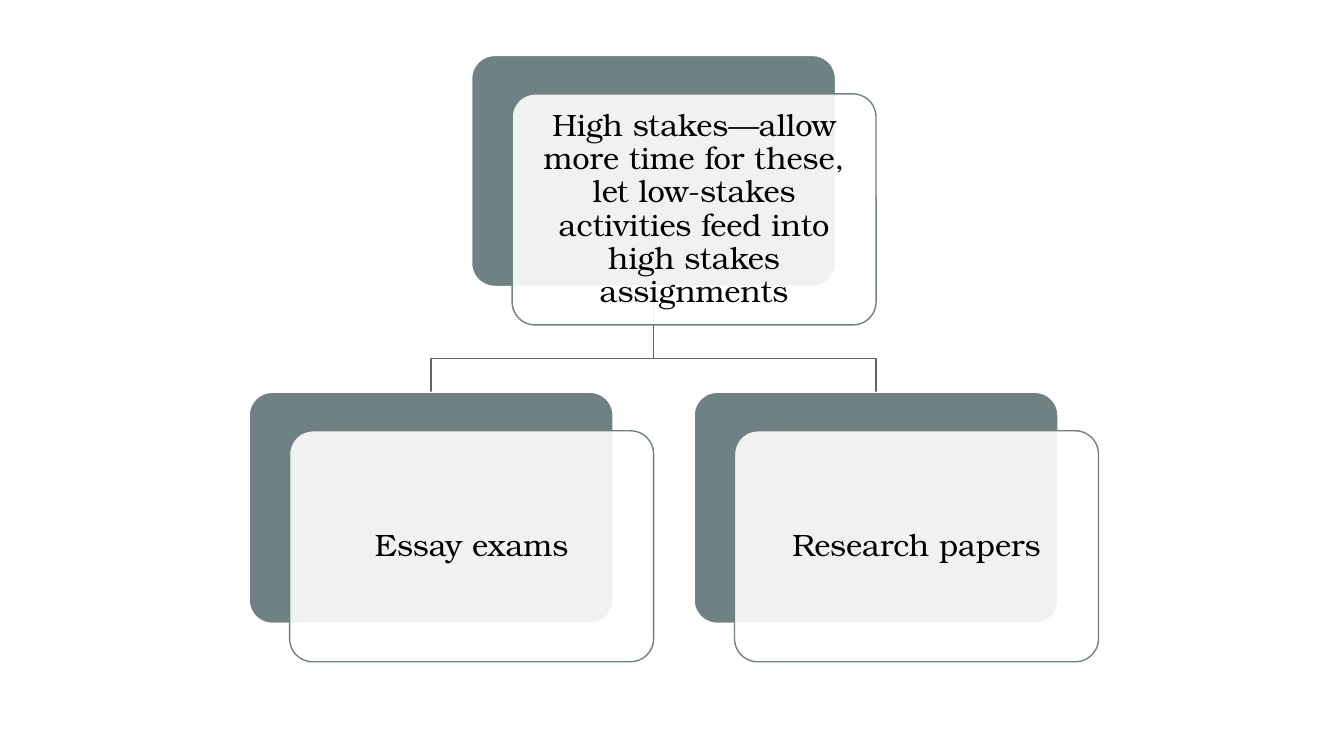
import pptx
import pptx.util
from lxml import etree
from pptx.dml.color import RGBColor
from pptx.enum.shapes import MSO_SHAPE
from pptx.enum.text import MSO_ANCHOR, PP_ALIGN
from pptx.oxml.ns import qn

Pt = pptx.util.Pt

ROOT = "High stakes—allow more time for these, let low-stakes activities feed into high stakes assignments"
CHILDREN = ["Essay exams", "Research papers"]

FONT = "TeX Gyre Bonum"
SLATE = RGBColor(0x6F, 0x81, 0x83)
BRANCH = RGBColor(0x59, 0x67, 0x69)
WHITE = RGBColor(0xFF, 0xFF, 0xFF)
BLACK = RGBColor(0x00, 0x00, 0x00)

# All lengths in points
CARD_WIDTH, CARD_HEIGHT = 260, 165
SHIFT_X, SHIFT_Y = 28.9, 27.5
CHILD_LEFT, CHILD_STEP = 178, 317.8
ROOT_TOP, CHILD_TOP = 39.6, 280.2
ELBOW_Y = 256.3
INSET = 6.6


def add_panel(page, left, top, fill, line):
    panel = page.shapes.add_shape(
        MSO_SHAPE.ROUNDED_RECTANGLE, Pt(left), Pt(top), Pt(CARD_WIDTH), Pt(CARD_HEIGHT))
    panel.adjustments[0] = 0.1
    panel.shadow.inherit = False
    panel.fill.solid()
    panel.fill.fore_color.rgb = fill
    panel.line.color.rgb = line
    panel.line.width = Pt(1)
    return panel


def add_node(page, left, top, label):
    """Add a solid panel with a translucent, labelled card shifted over it."""
    add_panel(page, left, top, SLATE, WHITE)
    card = add_panel(page, left + SHIFT_X, top + SHIFT_Y, WHITE, SLATE)
    color = card.fill._xPr.find(qn("a:solidFill"))[0]
    etree.SubElement(color, qn("a:alpha"), val="90000")

    frame = card.text_frame
    frame.word_wrap = True
    frame.vertical_anchor = MSO_ANCHOR.MIDDLE
    frame.margin_left = frame.margin_right = Pt(INSET)
    frame.margin_top = frame.margin_bottom = Pt(INSET)
    para = frame.paragraphs[0]
    para.text = label
    para.alignment = PP_ALIGN.CENTER
    para.line_spacing = 0.9
    para.font.name = FONT
    para.font.size = Pt(22)
    para.font.color.rgb = BLACK


def add_branch(page, start_x, end_x):
    """Add an elbow line from the root panel down to a child panel."""
    builder = page.shapes.build_freeform(Pt(start_x), Pt(ROOT_TOP + CARD_HEIGHT))
    builder.add_line_segments(
        [(Pt(start_x), Pt(ELBOW_Y)), (Pt(end_x), Pt(ELBOW_Y)), (Pt(end_x), Pt(CHILD_TOP))],
        close=False)
    branch = builder.convert_to_shape()
    branch.shadow.inherit = False
    branch.fill.background()
    branch.line.color.rgb = BRANCH
    branch.line.width = Pt(1)


deck = pptx.Presentation()
deck.slide_width, deck.slide_height = Pt(960), Pt(540)
page = deck.slides.add_slide(deck.slide_layouts[6])

child_lefts = [CHILD_LEFT + i * CHILD_STEP for i in range(len(CHILDREN))]
root_left = sum(child_lefts) / len(child_lefts)

for left in reversed(child_lefts):
    add_branch(page, root_left + CARD_WIDTH / 2, left + CARD_WIDTH / 2)
add_node(page, root_left, ROOT_TOP, ROOT)
for left, label in zip(child_lefts, CHILDREN):
    add_node(page, left, CHILD_TOP, label)

deck.save("out.pptx")
